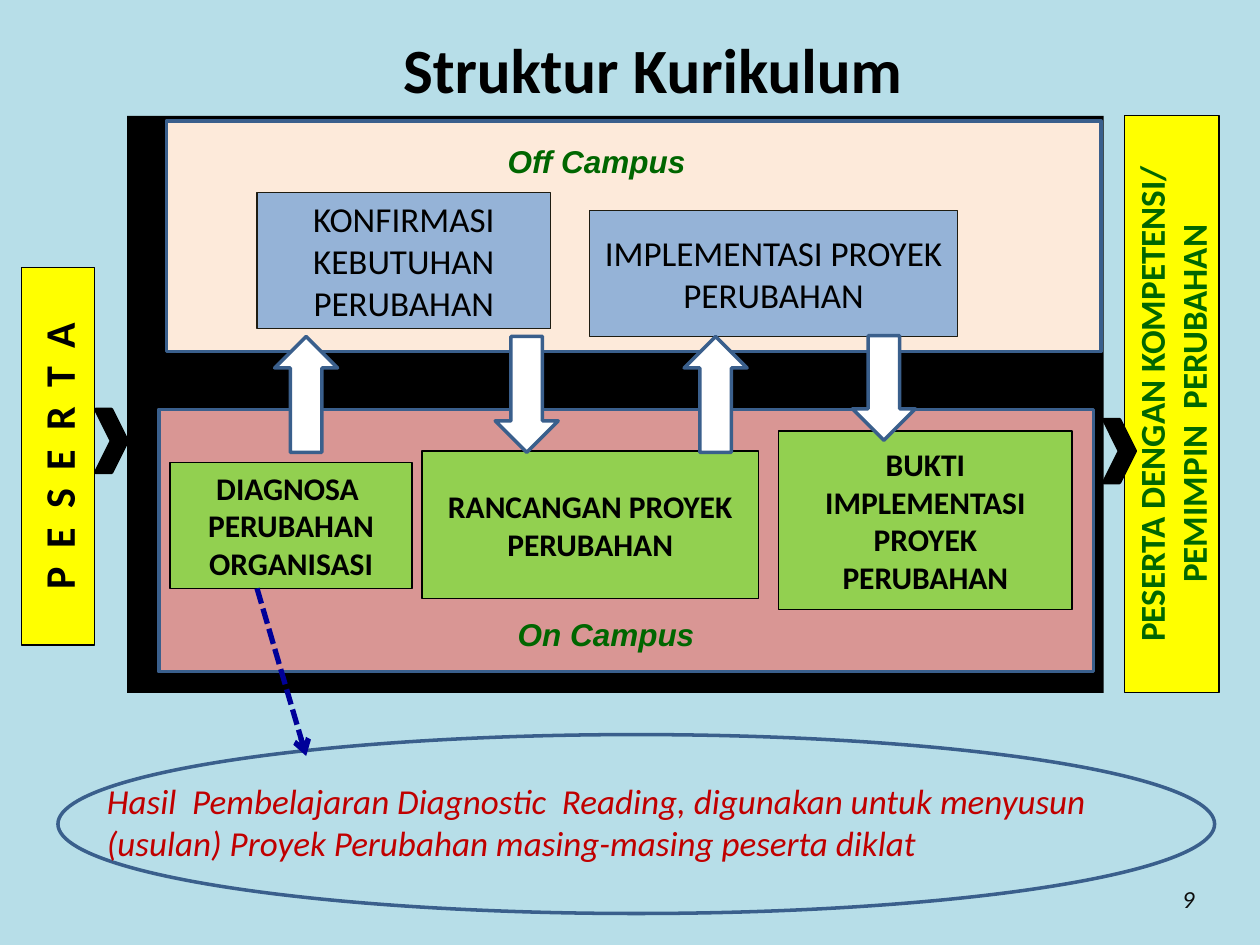
import pptx
import pptx.util
import pptx.dml.color
import pptx.enum.dml
import pptx.enum.shapes
import pptx.enum.text
from lxml import etree

Inches, Pt = pptx.util.Inches, pptx.util.Pt
SHAPE = pptx.enum.shapes.MSO_SHAPE
ALIGN = pptx.enum.text.PP_ALIGN
ANCHOR = pptx.enum.text.MSO_ANCHOR
BLACK, BLUE, GREEN = "000000", "3A5F8C", "006600"

# Content: (left, top, width, height) in inches
CAMPUS_PANELS = [
    ((1.26, 3.25, 7.42, 2.08), "D99694"),
    ((1.32, 0.96, 7.42, 1.83), "FDEADA"),
]
OFF_CAMPUS_STEPS = [
    ("KONFIRMASI KEBUTUHAN PERUBAHAN", (2.04, 1.53, 2.33, 1.08)),
    ("IMPLEMENTASI PROYEK PERUBAHAN", (4.68, 1.67, 2.92, 1)),
]
ON_CAMPUS_STEPS = [
    ("DIAGNOSA  PERUBAHAN ORGANISASI", (1.35, 3.67, 1.92, 1)),
    ("RANCANGAN PROYEK PERUBAHAN", (3.35, 3.58, 2.67, 1.17)),
    ("BUKTI IMPLEMENTASI PROYEK PERUBAHAN", (6.18, 3.42, 2.33, 1.42)),
]
CAMPUS_LABELS = [
    ("Off Campus", (3.93, 1.08, 1.75, 0.4)),
    ("On Campus", (4.01, 4.83, 1.75, 0.4)),
]
UP, DOWN = 270, 90
FLOW_ARROWS = [  # box before rotation, direction
    ((1.97, 2.88, 0.92, 0.5), UP),
    ((3.72, 2.88, 0.92, 0.5), DOWN),
    ((5.22, 2.88, 0.92, 0.5), UP),
    ((6.6, 2.83, 0.83, 0.5), DOWN),
]
SIDE_BANNERS = [  # box before rotation, text size, colour
    ("P  E  S  E  R  T  A", (-1.04, 3.33, 3, 0.58), 24, BLACK),
    ("PESERTA DENGAN KOMPETENSI/ PEMIMPIN  PERUBAHAN",
     (7.01, 2.83, 4.58, 0.75), 20, GREEN),
]
CHEVRONS = [(0.76, 3.25, 0.25, 0.5), (8.76, 3.33, 0.25, 0.5)]
RESULT = ("Hasil  Pembelajaran Diagnostic  Reading, digunakan untuk menyusun "
          "(usulan) Proyek Perubahan masing-masing peserta diklat")

deck = pptx.Presentation()
deck.slide_width, deck.slide_height = Inches(10), Inches(7.5)
slide = deck.slides.add_slide(deck.slide_layouts[6])


def rgb(value):
    return pptx.dml.color.RGBColor.from_string(value)


def write(holder, text, size, color=BLACK, font="Calibri", bold=False,
          italic=False, align=ALIGN.CENTER, anchor=ANCHOR.MIDDLE):
    frame = holder.text_frame
    frame.word_wrap = True
    frame.vertical_anchor = anchor
    paragraph = frame.paragraphs[0]
    paragraph.text = text
    paragraph.alignment = align
    style = paragraph.font
    style.name, style.size = font, Pt(size)
    style.bold, style.italic = bold, italic
    style.color.rgb = rgb(color)


def add_shape(kind, box, fill=None, line=None, width=2, rotation=0):
    shape = slide.shapes.add_shape(kind, *map(Inches, box))
    shape.shadow.inherit = False
    shape.rotation = rotation
    if fill:
        shape.fill.solid()
        shape.fill.fore_color.rgb = rgb(fill)
    else:
        shape.fill.background()
    if line:
        shape.line.color.rgb = rgb(line)
        shape.line.width = Pt(width)
    else:
        shape.line.fill.background()
    return shape


def add_text(text, box, size, **style):
    write(slide.shapes.add_textbox(*map(Inches, box)), text, size, **style)


slide.background.fill.solid()
slide.background.fill.fore_color.rgb = rgb("B7DEE8")

# Black frame and the two campus panels
add_shape(SHAPE.RECTANGLE, (1.01, 0.92, 7.75, 4.58), BLACK)
for box, fill in CAMPUS_PANELS:
    add_shape(SHAPE.RECTANGLE, box, fill, BLUE)

# Programme steps
for steps, fill, edge, size, bold in (
        (OFF_CAMPUS_STEPS, "95B3D7", "1E1C11", 20, False),
        (ON_CAMPUS_STEPS, "92D050", BLACK, 18, True)):
    for text, box in steps:
        step = add_shape(SHAPE.RECTANGLE, box, fill, edge, 0.75)
        write(step, text, size, bold=bold)

for text, box in CAMPUS_LABELS:
    add_text(text, box, 18, color=GREEN, font="Arial", bold=True, italic=True,
             align=ALIGN.LEFT, anchor=ANCHOR.TOP)

# Flow between the campuses
for box, direction in FLOW_ARROWS:
    add_shape(SHAPE.RIGHT_ARROW, box, "FFFFFF", BLUE, rotation=direction)

# Participants before and after
for text, box, size, color in SIDE_BANNERS:
    banner = add_shape(SHAPE.RECTANGLE, box, "FFFF00", BLACK, 0.75, rotation=270)
    write(banner, text, size, color, bold=True)
for box in CHEVRONS:
    add_shape(SHAPE.CHEVRON, box, BLACK, BLACK)

# Title and page number
add_text("Struktur Kurikulum", (1.12, 0.25, 8.12, 0.58), 36, bold=True)
add_text("9", (7.25, 6.93, 2.33, 0.4), 14, color="0D0D0D", italic=True,
         align=ALIGN.RIGHT)

# Diagnostic result, with the dashed arrow leading to it
add_shape(SHAPE.OVAL, (0.46, 5.83, 9.18, 1.42), line=BLUE)
add_text(RESULT, (0.75, 6.14, 8.04, 0.77), 20, color="C00000", italic=True,
         align=ALIGN.LEFT, anchor=ANCHOR.TOP)
result_arrow = slide.shapes.add_connector(
    pptx.enum.shapes.MSO_CONNECTOR.STRAIGHT,
    *map(Inches, (2.04, 4.67, 2.43, 6)))
result_arrow.line.color.rgb = rgb("000099")
result_arrow.line.width = Pt(3)
result_arrow.line.dash_style = pptx.enum.dml.MSO_LINE.SQUARE_DOT
A = "{http://schemas.openxmlformats.org/drawingml/2006/main}"
properties = result_arrow.line._get_or_add_ln().getparent()
etree.SubElement(properties.find(A + "ln"), A + "tailEnd", type="arrow")
etree.SubElement(properties, A + "effectLst")

deck.save("out.pptx")
